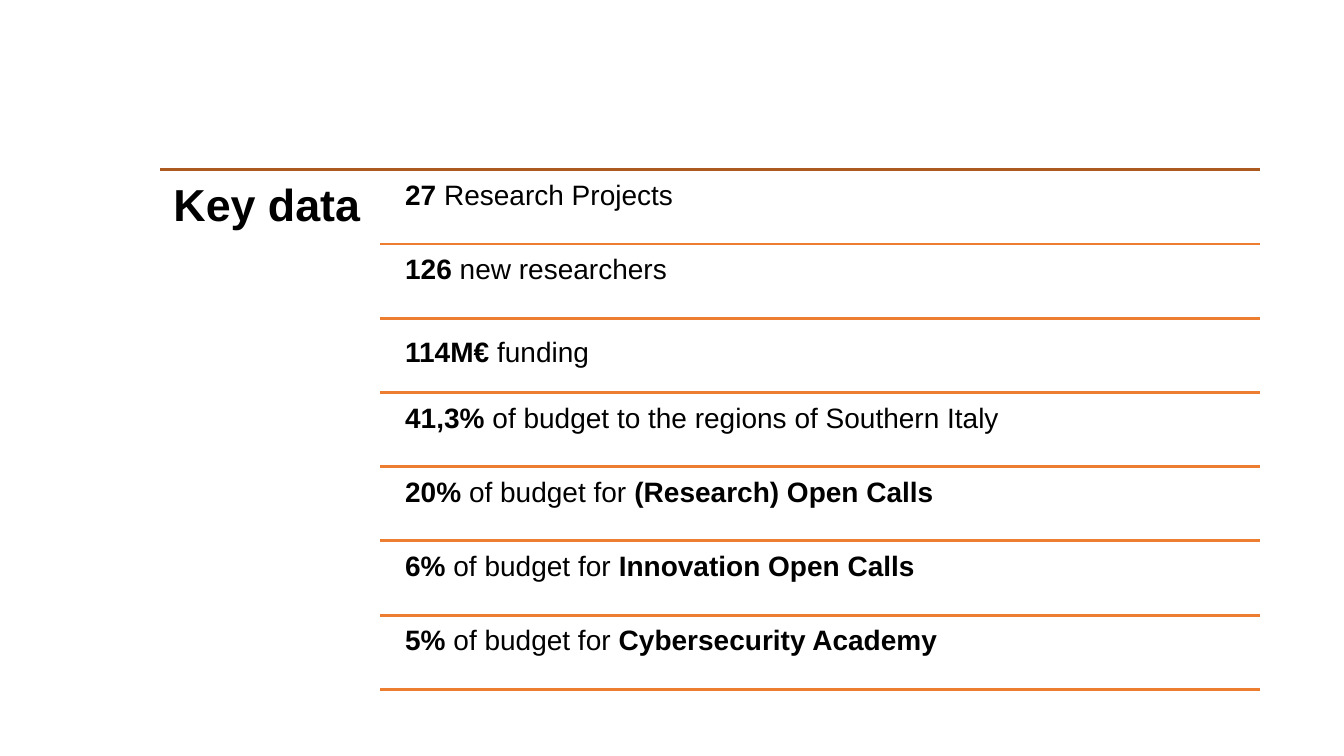
import pptx
import pptx.dml.color
import pptx.enum.shapes
import pptx.enum.text
import pptx.oxml
import pptx.oxml.ns
import pptx.util
from pptx.util import Cm


def color(hex_string):
    return pptx.dml.color.RGBColor.from_string(hex_string)


class KeyDataSlide:
    font_name = "Arial"
    text_color = "000000"
    top_rule_color = "AC5A20"
    row_rule_color = "ED7D31"
    rule_width = 2
    line_spacing = 0.9

    def __init__(self, presentation):
        self.slide = presentation.slides.add_slide(presentation.slide_layouts[5])

    def place(self, shape, left, top, width, height):
        box = {"left": left, "top": top, "width": width, "height": height}
        for name, value in box.items():
            setattr(shape, name, Cm(value))

    def fill_text(self, shape, runs, size, inset):
        """Fill a shape with one paragraph of (text, bold) runs."""
        frame = shape.text_frame
        frame_format = {
            "word_wrap": True,
            "auto_size": pptx.enum.text.MSO_AUTO_SIZE.NONE,
            "vertical_anchor": pptx.enum.text.MSO_ANCHOR.TOP,
        }
        for side in ("left", "top", "right", "bottom"):
            frame_format[f"margin_{side}"] = Cm(inset)
        for name, value in frame_format.items():
            setattr(frame, name, value)

        paragraph = frame.paragraphs[0]
        paragraph.alignment = pptx.enum.text.PP_ALIGN.LEFT
        paragraph.line_spacing = self.line_spacing
        for text, bold in runs:
            run = paragraph.add_run()
            run.text = text
            run_format = {"name": self.font_name, "size": pptx.util.Pt(size), "bold": bold}
            for name, value in run_format.items():
                setattr(run.font, name, value)
            run.font.color.rgb = color(self.text_color)

    def title(self, text, left, top, width, height):
        shape = self.slide.shapes.title
        self.place(shape, left, top, width, height)
        self.fill_text(shape, [(text, True)], size=32, inset=0.33)

    def row_text(self, runs, left, top, width, height):
        shape = self.slide.shapes.add_textbox(Cm(left), Cm(top), Cm(width), Cm(height))
        self.fill_text(shape, runs, size=20, inset=0.2)

    def rule(self, left, right, y, line_color):
        connector = self.slide.shapes.add_connector(
            pptx.enum.shapes.MSO_CONNECTOR.STRAIGHT, Cm(left), Cm(y), Cm(right), Cm(y)
        )
        connector.line.color.rgb = color(line_color)
        connector.line.width = pptx.util.Pt(self.rule_width)
        properties = connector.element.find(pptx.oxml.ns.qn("p:spPr"))
        properties.append(pptx.oxml.parse_xml(f"<a:effectLst {pptx.oxml.ns.nsdecls('a')}/>"))


ROWS = [
    [("27", True), (" Research Projects", False)],
    [("126", True), (" new researchers", False)],
    [("114M€", True), (" funding", False)],
    [("41,3%", True), (" of budget to the regions of Southern Italy", False)],
    [("20%", True), (" of budget for ", False), ("(Research) Open Calls", True)],
    [("6%", True), (" of budget for ", False), ("Innovation Open Calls", True)],
    [("5% ", True), ("of budget for ", False), ("Cybersecurity Academy", True)],
]
FUNDING_ROW = 2
FUNDING_DROP = 0.21

LEFT, RIGHT, TOP = 4.04, 31.75, 4.28
TEXT_LEFT, TEXT_TOP = 10.01, 4.37
RULE_LEFT, FIRST_RULE = 9.58, 6.15
ROW_HEIGHT, ROW_PITCH = 1.78, 1.87


def main():
    presentation = pptx.Presentation()
    presentation.slide_width = Cm(33.87)
    presentation.slide_height = Cm(19.05)
    page = KeyDataSlide(presentation)

    # Heading under the top rule
    page.rule(LEFT, RIGHT, TOP, page.top_rule_color)
    page.title("Key data", LEFT, TOP, 5.54, 13.16)

    # Figures, each closed by a rule
    for index, runs in enumerate(ROWS):
        offset = index * ROW_PITCH
        drop = FUNDING_DROP if index == FUNDING_ROW else 0
        page.row_text(runs, TEXT_LEFT, TEXT_TOP + offset + drop, RIGHT - TEXT_LEFT, ROW_HEIGHT)
        page.rule(RULE_LEFT, RIGHT, FIRST_RULE + offset, page.row_rule_color)

    presentation.save("out.pptx")


if __name__ == "__main__":
    main()
